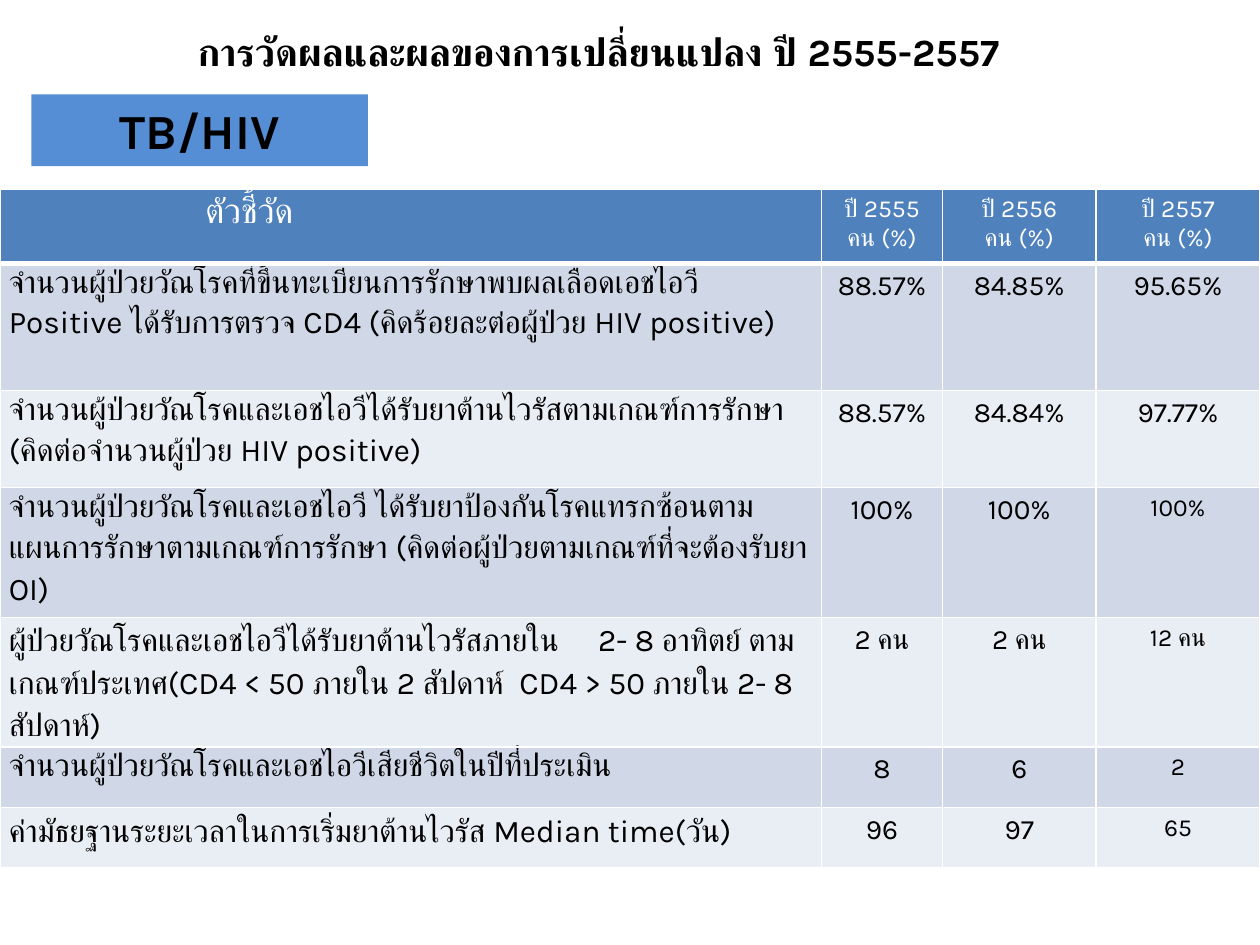
from lxml import etree
from pptx import Presentation
from pptx.dml.color import RGBColor
from pptx.enum.shapes import MSO_SHAPE
from pptx.enum.text import MSO_ANCHOR, PP_ALIGN
from pptx.oxml.ns import qn
from pptx.util import Inches, Pt

RECTANGLE = MSO_SHAPE.RECTANGLE
LEFT, CENTER = PP_ALIGN.LEFT, PP_ALIGN.CENTER
TOP, MIDDLE = MSO_ANCHOR.TOP, MSO_ANCHOR.MIDDLE

FONT = "Karla"
BLACK, WHITE = "000000", "FFFFFF"
HEADER_FILL, BADGE_FILL = "4F81BD", "558ED5"
BAND_FILLS = ("D0D8E8", "E9EDF4")

TITLE = "การวัดผลและผลของการเปลี่ยนแปลง ปี 2555-2557"
BADGE = "TB/HIV"
INDICATOR_HEADING = "ตัวชี้วัด"
YEARS = ("2555", "2556", "2557")
UNIT = "คน (%)"
INDICATORS = [
    ("จำนวนผู้ป่วยวัณโรคที่ขึ้นทะเบียนการรักษาพบผลเลือดเอชไอวี Positive ได้รับการตรวจ CD4 (คิดร้อยละต่อผู้ป่วย HIV positive)",
     ("88.57%", "84.85%", "95.65%"), (16, 16, 16)),
    ("จำนวนผู้ป่วยวัณโรคและเอชไอวีได้รับยาต้านไวรัสตามเกณฑ์การรักษา (คิดต่อจำนวนผู้ป่วย HIV positive)",
     ("88.57%", "84.84%", "97.77%"), (16, 16, 16)),
    ("จำนวนผู้ป่วยวัณโรคและเอชไอวี ได้รับยาป้องกันโรคแทรกซ้อนตามแผนการรักษาตามเกณฑ์การรักษา (คิดต่อผู้ป่วยตามเกณฑ์ที่จะต้องรับยา OI)",
     ("100%", "100%", "100%"), (16, 16, 14)),
    ("ผู้ป่วยวัณโรคและเอชไอวีได้รับยาต้านไวรัสภายใน     2- 8 อาทิตย์ ตามเกณฑ์ประเทศ(CD4 < 50 ภายใน 2 สัปดาห์  CD4 > 50 ภายใน 2- 8  สัปดาห์)",
     ("2 คน", "2 คน", "12 คน"), (16, 16, 14)),
    ("จำนวนผู้ป่วยวัณโรคและเอชไอวีเสียชีวิตในปีที่ประเมิน",
     ("8", "6", "2"), (16, 16, 14)),
    ("ค่ามัธยฐานระยะเวลาในการเริ่มยาต้านไวรัส Median time(วัน)",
     ("96", "97", "65"), (16, 16, 14)),
]
COLUMN_WIDTHS = (6.52, 0.96, 1.22, 1.3)
ROW_HEIGHTS = (0.59, 1.01, 0.77, 1.03, 1.03, 0.48, 0.48)
TABLE_TOP = 1.5
HEADING_INDENT = 1.63


def rgb(color):
    return RGBColor.from_string(color)


def write(frame, lines, size, color=BLACK, align=CENTER, bold=False, spacing=None):
    frame.word_wrap = True
    for index, line in enumerate(lines):
        paragraph = frame.paragraphs[0] if index == 0 else frame.add_paragraph()
        paragraph.alignment = align
        if spacing:
            paragraph.line_spacing = spacing
        run = paragraph.add_run()
        run.text = line
        run.font.name = FONT
        run.font.size = Pt(size)
        run.font.bold = bold
        run.font.color.rgb = rgb(color)


def style_cell(cell, fill, bottom_width=1):
    properties = cell._tc.get_or_add_tcPr()
    for side, width in (("L", 1), ("R", 1), ("T", 1), ("B", bottom_width)):
        border = etree.SubElement(properties, qn(f"a:ln{side}"), w=str(Pt(width)))
        solid = etree.SubElement(border, qn("a:solidFill"))
        etree.SubElement(solid, qn("a:srgbClr"), val=WHITE)
    cell.fill.solid()
    cell.fill.fore_color.rgb = rgb(fill)


def add_results_table(slide):
    table = slide.shapes.add_table(
        len(ROW_HEIGHTS), len(COLUMN_WIDTHS), 0, Inches(TABLE_TOP),
        Inches(sum(COLUMN_WIDTHS)), Inches(sum(ROW_HEIGHTS))).table
    for column, width in zip(table.columns, COLUMN_WIDTHS):
        column.width = Inches(width)
    for row, height in zip(table.rows, ROW_HEIGHTS):
        row.height = Inches(height)

    for cell in table.rows[0].cells:
        style_cell(cell, HEADER_FILL, bottom_width=3)
    heading = table.cell(0, 0)
    heading.margin_left = Inches(HEADING_INDENT)
    write(heading.text_frame, [INDICATOR_HEADING], 20, WHITE, LEFT)
    for column, year in enumerate(YEARS, 1):
        write(table.cell(0, column).text_frame, [f"ปี {year}", UNIT], 14, WHITE)

    for row, (indicator, values, sizes) in enumerate(INDICATORS, 1):
        for cell in table.rows[row].cells:
            style_cell(cell, BAND_FILLS[(row - 1) % 2])
        label = table.cell(row, 0)
        label.margin_left = label.margin_right = Inches(0.07)
        label.margin_top = label.margin_bottom = 0
        write(label.text_frame, [indicator], 18, align=LEFT, spacing=1.15)
        for column, (value, size) in enumerate(zip(values, sizes), 1):
            write(table.cell(row, column).text_frame, [value], size)


def main():
    deck = Presentation()
    deck.slide_width, deck.slide_height = Inches(10), Inches(7.5)
    slide = deck.slides.add_slide(deck.slide_layouts[6])

    add_results_table(slide)

    title = slide.shapes.add_textbox(Inches(0.25), Inches(0.17), Inches(9), Inches(0.67))
    title.text_frame.vertical_anchor = TOP
    write(title.text_frame, [TITLE], 22, bold=True)

    badge = slide.shapes.add_shape(
        RECTANGLE, Inches(0.25), Inches(0.75), Inches(2.67), Inches(0.57))
    badge.shadow.inherit = False
    badge.fill.solid()
    badge.fill.fore_color.rgb = rgb(BADGE_FILL)
    badge.line.fill.background()
    badge.text_frame.vertical_anchor = MIDDLE
    write(badge.text_frame, [BADGE], 28, bold=True)

    deck.save("out.pptx")


if __name__ == "__main__":
    main()
